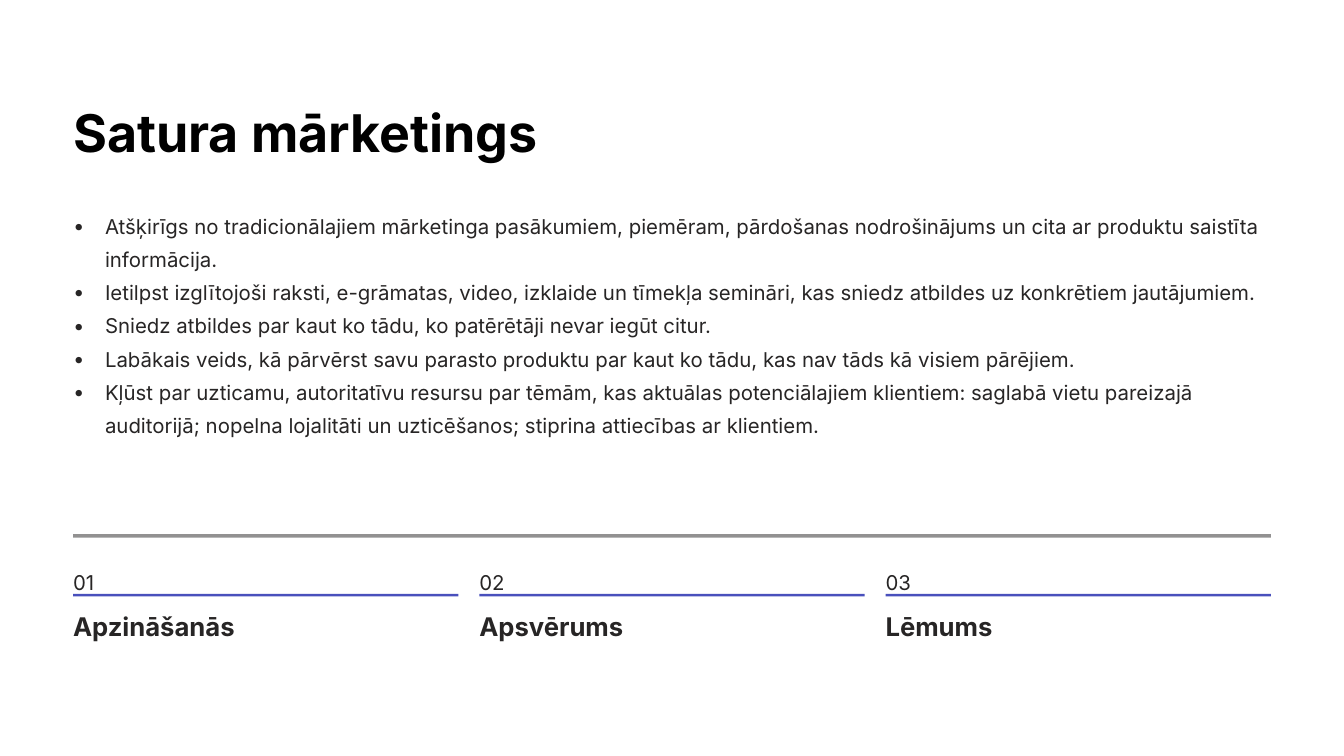
from dataclasses import dataclass

from lxml import etree
from pptx import Presentation
from pptx import util as u
from pptx.dml.color import RGBColor
from pptx.enum import shapes, text
from pptx.oxml.ns import qn


@dataclass(frozen=True)
class Theme:
    font: str = "Inter"
    paper: str = "FFFFFF"
    heading: str = "000000"
    ink: str = "272525"
    accent: str = "4950BC"
    title_size: float = 44.5
    body_size: float = 17.5
    label_size: float = 22
    title_line: float = 55.5
    body_line: float = 28.5
    label_line: float = 27.5


THEME = Theme()
WIDTH, HEIGHT = 16, 9
MARGIN, GAP, INDENT = 0.87, 0.25, 0.38
CONTENT = WIDTH - 2 * MARGIN

TITLE = "Satura mārketings"
POINTS = [
    "Atšķirīgs no tradicionālajiem mārketinga pasākumiem, piemēram, pārdošanas "
    "nodrošinājums un cita ar produktu saistīta informācija.",
    "Ietilpst izglītojoši raksti, e-grāmatas, video, izklaide un tīmekļa semināri, "
    "kas sniedz atbildes uz konkrētiem jautājumiem.",
    "Sniedz atbildes par kaut ko tādu, ko patērētāji nevar iegūt citur.",
    "Labākais veids, kā pārvērst savu parasto produktu par kaut ko tādu, "
    "kas nav tāds kā visiem pārējiem.",
    "Kļūst par uzticamu, autoritatīvu resursu par tēmām, kas aktuālas potenciālajiem "
    "klientiem: saglabā vietu pareizajā auditorijā; nopelna lojalitāti un uzticēšanos; "
    "stiprina attiecības ar klientiem.",
]
STAGES = ["Apzināšanās", "Apsvērums", "Lēmums"]


def place(shape, left, top, width, height):
    shape.left, shape.top = u.Inches(left), u.Inches(top)
    shape.width, shape.height = u.Inches(width), u.Inches(height)


def add_bullet(para):
    props = para._p.get_or_add_pPr()
    props.set("marL", str(u.Inches(INDENT)))
    props.set("indent", str(-u.Inches(INDENT)))
    etree.SubElement(props, qn("a:buFont")).set("typeface", THEME.font)
    etree.SubElement(props, qn("a:buChar")).set("char", "•")


def write(shape, lines, size, spacing, color=THEME.ink, bold=False, bullets=False):
    frame = shape.text_frame
    frame.word_wrap = True
    frame.auto_size = text.MSO_AUTO_SIZE.NONE
    frame.vertical_anchor = text.MSO_ANCHOR.TOP
    frame.margin_left = frame.margin_top = frame.margin_right = frame.margin_bottom = 0
    for index, line in enumerate(lines):
        para = frame.paragraphs[0] if index == 0 else frame.add_paragraph()
        if bullets:
            add_bullet(para)
        para.alignment = text.PP_ALIGN.LEFT
        para.line_spacing = u.Pt(spacing)
        para.space_before = para.space_after = u.Pt(0)
        span = para.add_run()
        span.text = line
        span.font.name, span.font.size, span.font.bold = THEME.font, u.Pt(size), bold
        span.font.color.rgb = RGBColor.from_string(color)


def add_label(page, box, line, size, spacing, **style):
    label = page.shapes.add_textbox(*map(u.Inches, box))
    write(label, [line], size, spacing, **style)


def add_rule(page, box, color, opacity=100):
    rule = page.shapes.add_shape(shapes.MSO_SHAPE.RECTANGLE, *map(u.Inches, box))
    rule.shadow.inherit = False
    rule.line.fill.background()
    rule.fill.solid()
    rule.fill.fore_color.rgb = RGBColor.from_string(color)
    if opacity < 100:
        tint = rule._element.spPr.find(f".//{qn('a:srgbClr')}")
        etree.SubElement(tint, qn("a:alpha")).set("val", str(opacity * 1000))


def fill_text(page, left, top, width):
    title, body = page.placeholders
    place(title, left, top, width, 0.78)
    write(title, [TITLE], THEME.title_size, THEME.title_line,
          color=THEME.heading, bold=True)
    place(body, left, top + 1.27, width, 3.52)
    write(body, POINTS, THEME.body_size, THEME.body_line, bullets=True)


def add_stages(page, left, top, width):
    """Draw the divider and, below it, one numbered column per stage."""
    add_rule(page, (left, top, width, 0.04), THEME.ink, opacity=50)
    column = (width - GAP * (len(STAGES) - 1)) / len(STAGES)
    for index, stage in enumerate(STAGES):
        x = left + index * (column + GAP)
        add_label(page, (x, top + 0.32, column, 0.31), f"{index + 1:02}",
                  THEME.body_size, THEME.body_line)
        add_rule(page, (x, top + 0.71, column, 0.03), THEME.accent)
        add_label(page, (x, top + 0.9, column, 0.39), stage,
                  THEME.label_size, THEME.label_line, bold=True)


def main():
    deck = Presentation()
    deck.slide_width, deck.slide_height = u.Inches(WIDTH), u.Inches(HEIGHT)
    page = deck.slides.add_slide(deck.slide_layouts[1])
    page.background.fill.solid()
    page.background.fill.fore_color.rgb = RGBColor.from_string(THEME.paper)
    fill_text(page, MARGIN, 1.17, CONTENT)
    add_stages(page, MARGIN, 6.36, CONTENT)
    deck.save("out.pptx")


if __name__ == "__main__":
    main()
